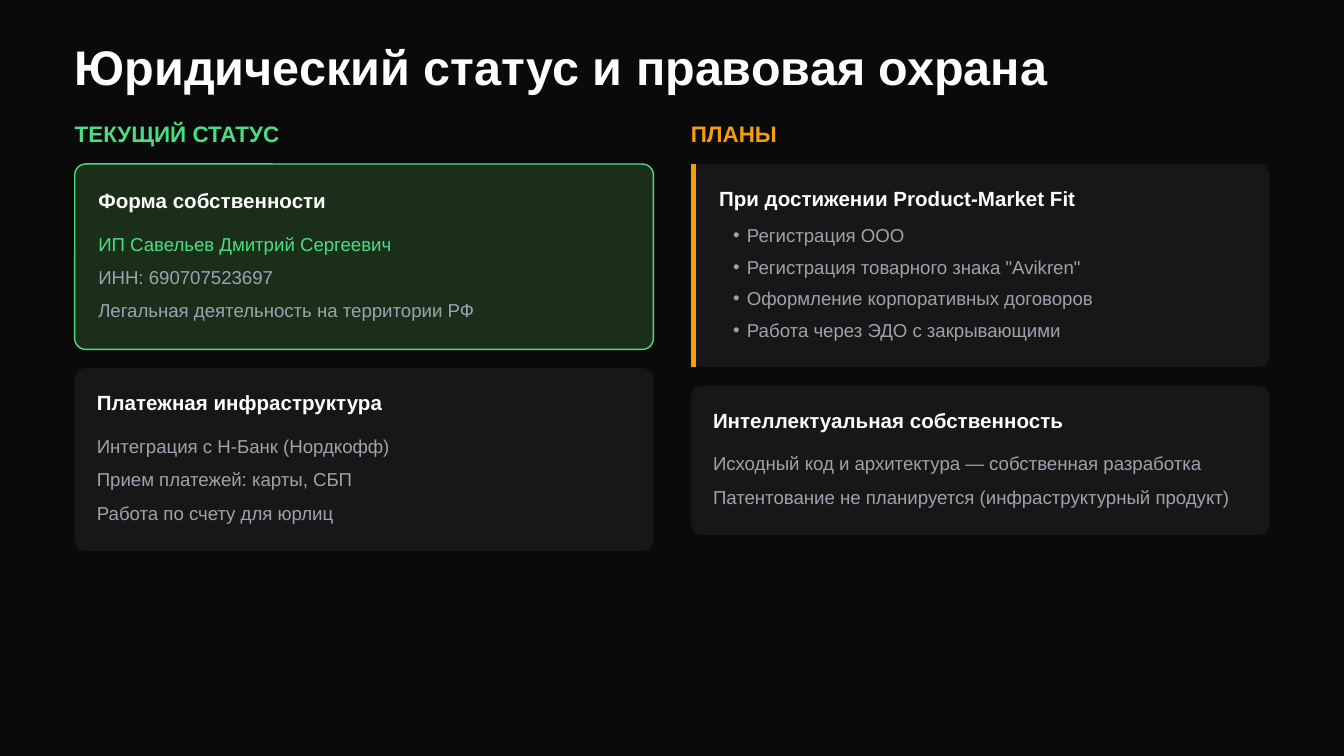
"""Build the slide on legal status and legal protection."""
from dataclasses import dataclass

from lxml import etree
from pptx import Presentation
from pptx.dml.color import RGBColor
from pptx.enum.shapes import MSO_CONNECTOR, MSO_SHAPE
from pptx.enum.text import MSO_ANCHOR
from pptx.oxml.ns import qn
from pptx.util import Inches, Pt

ROUNDED = MSO_SHAPE.ROUNDED_RECTANGLE
STRAIGHT = MSO_CONNECTOR.STRAIGHT
TOP = MSO_ANCHOR.TOP
SLIDE_WIDTH = Inches(10)
SLIDE_HEIGHT = SLIDE_WIDTH * 9 // 16
GRID_COLUMNS = 100
CELL = SLIDE_WIDTH / GRID_COLUMNS


@dataclass(frozen=True)
class Theme:
    """Colours, type sizes and line widths."""
    font: str = "Arial"
    page: str = "0A0A0A"
    card: str = "171717"
    active_card: str = "1A2E1A"
    white: str = "FFFFFF"
    grey: str = "9CA3AF"
    green: str = "4ADE80"
    orange: str = "F59E0B"
    title: float = 26
    label: float = 12
    heading: float = 11
    body: float = 10
    bullet_gap: float = 5
    border: float = 0.75
    accent: float = 3


@dataclass(frozen=True)
class Grid:
    """Positions and gaps in grid cells."""
    left: float = 5.56
    column_step: float = 45.84
    column_width: float = 43.06
    title_top: float = 2.75
    label_top: float = 8.93
    cards_top: float = 12.2
    card_gap: float = 1.4
    radius: float = 0.83
    body_drop: float = 2.8
    row_step: float = 2.48
    bullet_indent: float = 1.04


@dataclass(frozen=True)
class Card:
    """A panel with a heading and lines of text."""
    heading: str
    lines: tuple[str, ...]
    height: float
    inset: float = 1.65
    active: bool = False
    accented: bool = False


@dataclass(frozen=True)
class Column:
    """A labelled stack of cards."""
    label: str
    color: str
    cards: tuple[Card, ...]


THEME, GRID = Theme(), Grid()
COLUMNS = (
    Column("ТЕКУЩИЙ СТАТУС", THEME.green, (
        Card("Форма собственности",
             ("ИП Савельев Дмитрий Сергеевич", "ИНН: 690707523697",
              "Легальная деятельность на территории РФ"),
             13.8, inset=1.75, active=True),
        Card("Платежная инфраструктура",
             ("Интеграция с Н-Банк (Нордкофф)", "Прием платежей: карты, СБП",
              "Работа по счету для юрлиц"), 13.6),
    )),
    Column("ПЛАНЫ", THEME.orange, (
        Card("При достижении Product-Market Fit",
             ("Регистрация ООО", 'Регистрация товарного знака "Avikren"',
              "Оформление корпоративных договоров",
              "Работа через ЭДО с закрывающими"),
             15.1, inset=2.1, accented=True),
        Card("Интеллектуальная собственность",
             ("Исходный код и архитектура — собственная разработка",
              "Патентование не планируется (инфраструктурный продукт)"), 11.1),
    )),
)


def cells(count: float) -> int:
    """Convert grid cells to slide units."""
    return round(count * CELL)


def apply(target, values: dict) -> None:
    """Set every named attribute on the target."""
    for name, value in values.items():
        setattr(target, name, value)


def add_text(page, lines: tuple[str, ...], left: float, top: float, width: float,
             height: float, size: float, color: str, bold: bool = False,
             spacing: float | None = None):
    """Add a text box without margins, one paragraph per line."""
    box = page.shapes.add_textbox(*map(cells, (left, top, width, height)))
    frame = box.text_frame
    apply(frame, {"margin_left": 0, "margin_top": 0, "margin_right": 0,
                  "margin_bottom": 0, "word_wrap": True, "vertical_anchor": TOP})
    for index, line in enumerate(lines):
        para = frame.paragraphs[0] if index == 0 else frame.add_paragraph()
        para.line_spacing = spacing
        span = para.add_run()
        span.text = line
        apply(span.font, {"name": THEME.font, "size": Pt(size), "bold": bold})
        span.font.color.rgb = RGBColor.from_string(color)
    return frame


def add_bullets(frame) -> None:
    """Give each paragraph a hanging bullet and a gap from the one above."""
    indent = cells(GRID.bullet_indent)
    frame.margin_left = indent
    for index, para in enumerate(frame.paragraphs):
        para.space_before = Pt(THEME.bullet_gap if index else 0)
        properties = para._p.get_or_add_pPr()
        properties.set("marL", str(indent))
        properties.set("indent", str(-indent))
        color = etree.SubElement(properties, qn("a:buClr"))
        etree.SubElement(color, qn("a:srgbClr"), val=THEME.grey)
        etree.SubElement(properties, qn("a:buSzPct"), val="100000")
        etree.SubElement(properties, qn("a:buFont"), typeface=THEME.font)
        etree.SubElement(properties, qn("a:buChar"), char="•")
        etree.SubElement(para._p, qn("a:endParaRPr"), sz=str(round(THEME.body * 100)))


def add_panel(page, card: Card, left: float, top: float) -> None:
    """Draw the card background with its border or accent bar."""
    panel = page.shapes.add_shape(
        ROUNDED, *map(cells, (left, top, GRID.column_width, card.height)))
    panel.shadow.inherit = False
    panel.adjustments[0] = GRID.radius / card.height
    panel.fill.solid()
    fill = THEME.active_card if card.active else THEME.card
    panel.fill.fore_color.rgb = RGBColor.from_string(fill)
    if card.active:
        panel.line.color.rgb = RGBColor.from_string(THEME.green)
        panel.line.width = Pt(THEME.border)
    else:
        panel.line.fill.background()
    if card.accented:
        center = cells(left) + Pt(THEME.accent) // 2
        bar = page.shapes.add_connector(
            STRAIGHT, center, cells(top), center, cells(top + card.height))
        bar.line.color.rgb = RGBColor.from_string(THEME.orange)
        bar.line.width = Pt(THEME.accent)
        etree.SubElement(bar._element.spPr, qn("a:effectLst"))


def add_card(page, card: Card, left: float, top: float) -> None:
    """Draw a card with its heading and body."""
    add_panel(page, card, left, top)
    text_left = left + card.inset
    width = GRID.column_width - 2 * card.inset + 0.6
    heading_top = top + (1.8 if card.active else 1.65)
    body_top = heading_top + GRID.body_drop
    add_text(page, (card.heading,), text_left, heading_top, width, 1.7,
             THEME.heading, THEME.white, bold=True)
    if card.accented:
        add_bullets(add_text(page, card.lines, text_left, body_top, width, 8.3,
                             THEME.body, THEME.grey))
        return
    for row, line in enumerate(card.lines):
        color = THEME.green if card.active and row == 0 else THEME.grey
        add_text(page, (line,), text_left, body_top + row * GRID.row_step, width,
                 1.8, THEME.body, color, spacing=1.3)


def main() -> None:
    """Build and save the deck."""
    deck = Presentation()
    apply(deck, {"slide_width": SLIDE_WIDTH, "slide_height": SLIDE_HEIGHT})
    page = deck.slides.add_slide(deck.slide_layouts[6])
    page.background.fill.solid()
    page.background.fill.fore_color.rgb = RGBColor.from_string(THEME.page)
    add_text(page, ("Юридический статус и правовая охрана",), GRID.left,
             GRID.title_top, 90.7, 4.1, THEME.title, THEME.white, bold=True)
    for index, column in enumerate(COLUMNS):
        left = GRID.left + index * GRID.column_step
        add_text(page, (column.label,), left, GRID.label_top, 43.9, 1.9,
                 THEME.label, column.color, bold=True)
        top = GRID.cards_top
        for card in column.cards:
            add_card(page, card, left, top)
            top += card.height + GRID.card_gap
    deck.save("out.pptx")


if __name__ == "__main__":
    main()
